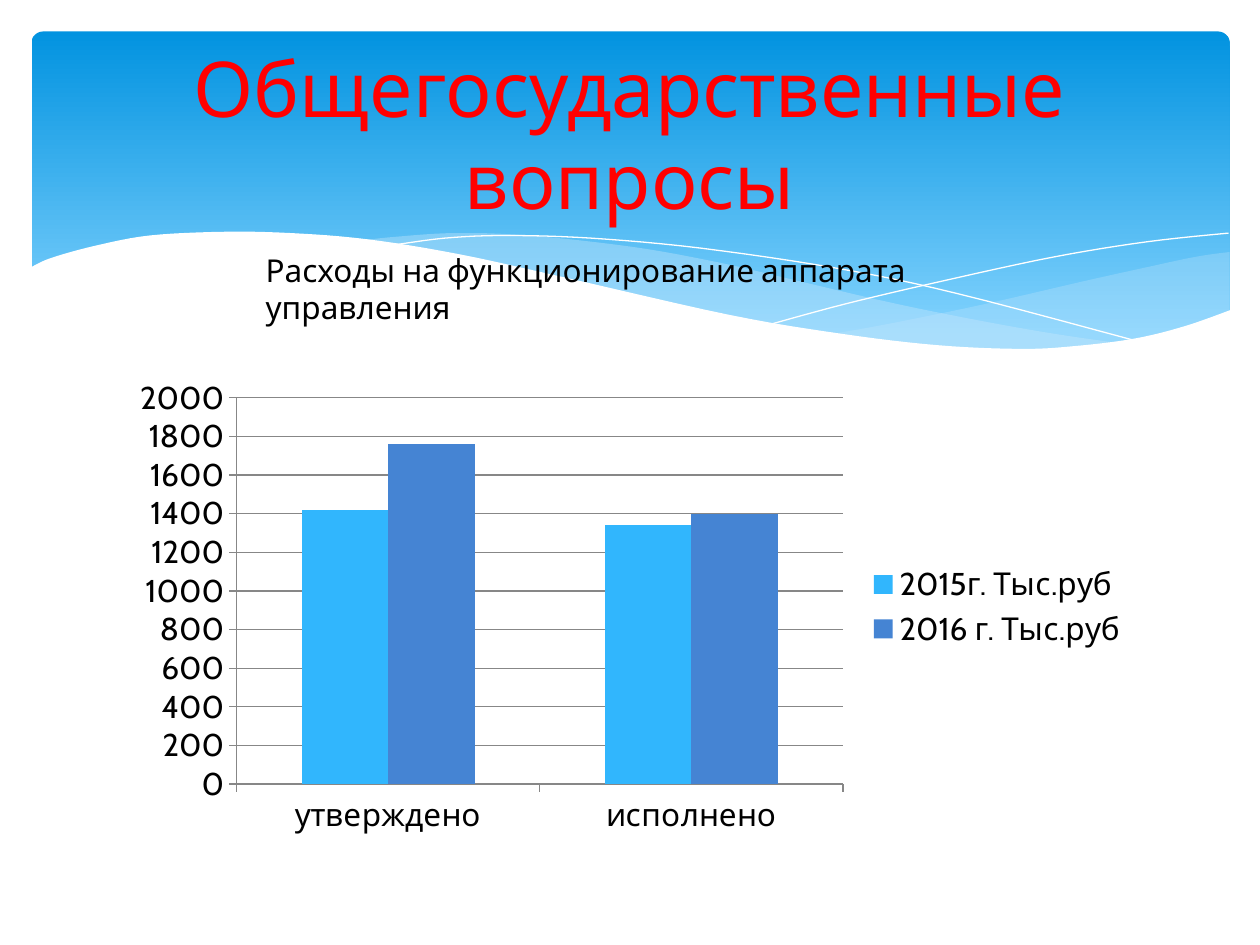
import pptx
import pptx.chart.data
import pptx.dml.color
import pptx.enum.chart
import pptx.enum.shapes
import pptx.enum.text
import pptx.util
import lxml.etree
from pptx.oxml.ns import qn

Pt = pptx.util.Pt


def rgb(value):
    return pptx.dml.color.RGBColor.from_string(value)


def smooth(points, steps=6):
    """Catmull-Rom curve through the given points."""
    padded = [points[0], *points, points[-1]]
    curve = [points[0]]
    for a, b, c, d in zip(padded, padded[1:], padded[2:], padded[3:]):
        for step in range(1, steps + 1):
            t = step / steps
            curve.append(tuple(
                (2 * q + (r - p) * t + (2 * p - 5 * q + 4 * r - s) * t ** 2
                 + (3 * q - p - 3 * r + s) * t ** 3) / 2
                for p, q, r, s in zip(a, b, c, d)))
    return curve


class SlideBuilder:
    font = "Cabin"
    text_color = "000000"
    axis_color = "878787"
    size = 18

    def __init__(self, page):
        self.page = page

    def banner(self, left, top, width, height, start, end):
        shape = self.page.shapes.add_shape(
            pptx.enum.shapes.MSO_SHAPE.ROUNDED_RECTANGLE,
            Pt(left), Pt(top), Pt(width), Pt(height))
        shape.adjustments[0] = 0.034
        shape.shadow.inherit = False
        shape.line.fill.background()
        shape.fill.gradient()
        shape.fill.gradient_angle = 270
        for stop, color, position in zip(shape.fill.gradient_stops, (start, end), (0, 0.9)):
            stop.color.rgb = rgb(color)
            stop.position = position

    def outline(self, points, close):
        (x, y), *rest = [(Pt(x), Pt(y)) for x, y in points]
        builder = self.page.shapes.build_freeform(x, y)
        builder.add_line_segments(rest, close=close)
        shape = builder.convert_to_shape()
        shape.shadow.inherit = False
        return shape

    def wave(self, points, color, opacity=100):
        shape = self.outline(points, True)
        shape.line.fill.background()
        shape.fill.solid()
        shape.fill.fore_color.rgb = rgb(color)
        if opacity < 100:
            color_node = shape.fill._xPr.find(qn("a:solidFill"))[0]
            alpha = lxml.etree.SubElement(color_node, qn("a:alpha"))
            alpha.set("val", str(opacity * 1000))

    def curve(self, points, color):
        shape = self.outline(smooth(points), False)
        shape.fill.background()
        shape.line.color.rgb = rgb(color)
        shape.line.width = Pt(0)

    def text(self, left, top, width, height, words, size=size, color=text_color,
             align="LEFT", anchor="TOP"):
        box = self.page.shapes.add_textbox(Pt(left), Pt(top), Pt(width), Pt(height))
        frame = box.text_frame
        frame.word_wrap = True
        frame.vertical_anchor = pptx.enum.text.MSO_ANCHOR[anchor]
        para = frame.paragraphs[0]
        para.text = words
        para.alignment = pptx.enum.text.PP_ALIGN[align]
        para.font.name = self.font
        para.font.size = Pt(size)
        para.font.color.rgb = rgb(color)

    def columns(self, left, top, width, height, categories, series):
        data = pptx.chart.data.CategoryChartData()
        data.categories = categories
        for name, values, _ in series:
            data.add_series(name, values)
        chart = self.page.shapes.add_chart(
            pptx.enum.chart.XL_CHART_TYPE.COLUMN_CLUSTERED,
            Pt(left), Pt(top), Pt(width), Pt(height), data).chart
        chart.has_title = False
        chart.font.name = self.font
        chart.font.size = Pt(self.size)
        chart.font.color.rgb = rgb(self.text_color)
        chart.has_legend = True
        chart.legend.position = pptx.enum.chart.XL_LEGEND_POSITION.RIGHT
        chart.legend.include_in_layout = False
        plot = chart.plots[0]
        plot.gap_width = 150
        plot.overlap = 0
        plot.vary_by_categories = False
        for column, (_, _, color) in zip(plot.series, series):
            column.format.fill.solid()
            column.format.fill.fore_color.rgb = rgb(color)
        scale = chart.value_axis
        scale.minimum_scale, scale.maximum_scale, scale.major_unit = 0, 2000, 200
        scale.has_major_gridlines = True
        for axis in (chart.category_axis, scale):
            axis.major_tick_mark = pptx.enum.chart.XL_TICK_MARK.OUTSIDE
            axis.format.line.color.rgb = rgb(self.axis_color)
        scale.major_gridlines.format.line.color.rgb = rgb(self.axis_color)


def main():
    deck = pptx.Presentation()
    deck.slide_width, deck.slide_height = Pt(720), Pt(540)
    slide = SlideBuilder(deck.slides.add_slide(deck.slide_layouts[6]))

    # Blue banner
    slide.banner(18, 18, 684.7, 194.4, "0293E0", "83D3FE")

    # Translucent waves
    right_top = [(702.7, 144), (682.6, 146.9), (652.3, 153.4), (619.9, 160.6),
                 (560.9, 174.2), (508.3, 185), (475.9, 190.8)]
    right_bottom = [(475.9, 190.8), (517.7, 195.8), (562.3, 199.4), (601.2, 199.4),
                    (640.1, 195.8), (673.2, 188.6), (702.7, 177.8)]
    slide.wave(smooth(right_top) + smooth(right_bottom), "C6E7FC", 29)
    broad_top = [(643, 196.6), (602.6, 190.8), (558, 182.9), (508.3, 172.8),
                 (452.9, 159.8), (409.7, 149.8), (361.4, 141.1), (302.4, 134.6),
                 (259.9, 133.2), (225.4, 135.4), (205.9, 137.5)]
    broad_bottom = [(205.9, 137.5), (246.2, 143.3), (323.3, 159.8), (407.5, 178.6),
                    (468, 190.1), (519.8, 197.3), (573.1, 200.2), (610.6, 199.4),
                    (643, 196.6)]
    slide.wave(smooth(broad_top) + smooth(broad_bottom), "C6E7FC", 40)

    # Thin white curves
    slide.curve([(222.5, 140.4), (254.2, 136.1), (288.7, 134.6), (337.7, 136.1),
                 (400.3, 141.8), (478.8, 153.4), (547.2, 167.8), (653, 195.8)], "FFFFFF")
    slide.curve([(441.4, 185), (483.8, 173.5), (538.6, 160.6), (601.9, 146.9),
                 (655.2, 138.2), (702, 133.2)], "FFFFFF")

    # White wave that cuts the banner's lower edge
    edge = [(703.4, 177.1), (676.8, 186.5), (647.3, 193.7), (612, 198), (582.5, 199.4),
            (535.7, 197.3), (481, 190.8), (416.9, 180), (321.8, 158.4), (262.8, 145.4),
            (210.2, 136.8), (165.6, 133.2), (127.4, 132.5), (85.7, 134.6),
            (54.7, 140.4), (28.8, 147.6), (16.6, 153.4)]
    slide.wave(smooth(edge) + [(16.6, 236.9), (703.4, 236.9)], "FFFFFF")

    # Chart
    slide.columns(68.4, 211, 583.2, 271.4, ["утверждено", "исполнено"], [
        ("2015г. Тыс.руб", (1420, 1340), "31B6FD"),
        ("2016 г. Тыс.руб", (1760, 1400), "4584D3")])

    # Title and subtitle
    slide.text(36, 26.6, 648, 98.6, "Общегосударственные вопросы", 44, "FF0000",
               "CENTER", "MIDDLE")
    slide.text(144.7, 139.7, 435.6, 28.8, "Расходы на функционирование аппарата управления")

    deck.save("out.pptx")


if __name__ == "__main__":
    main()
